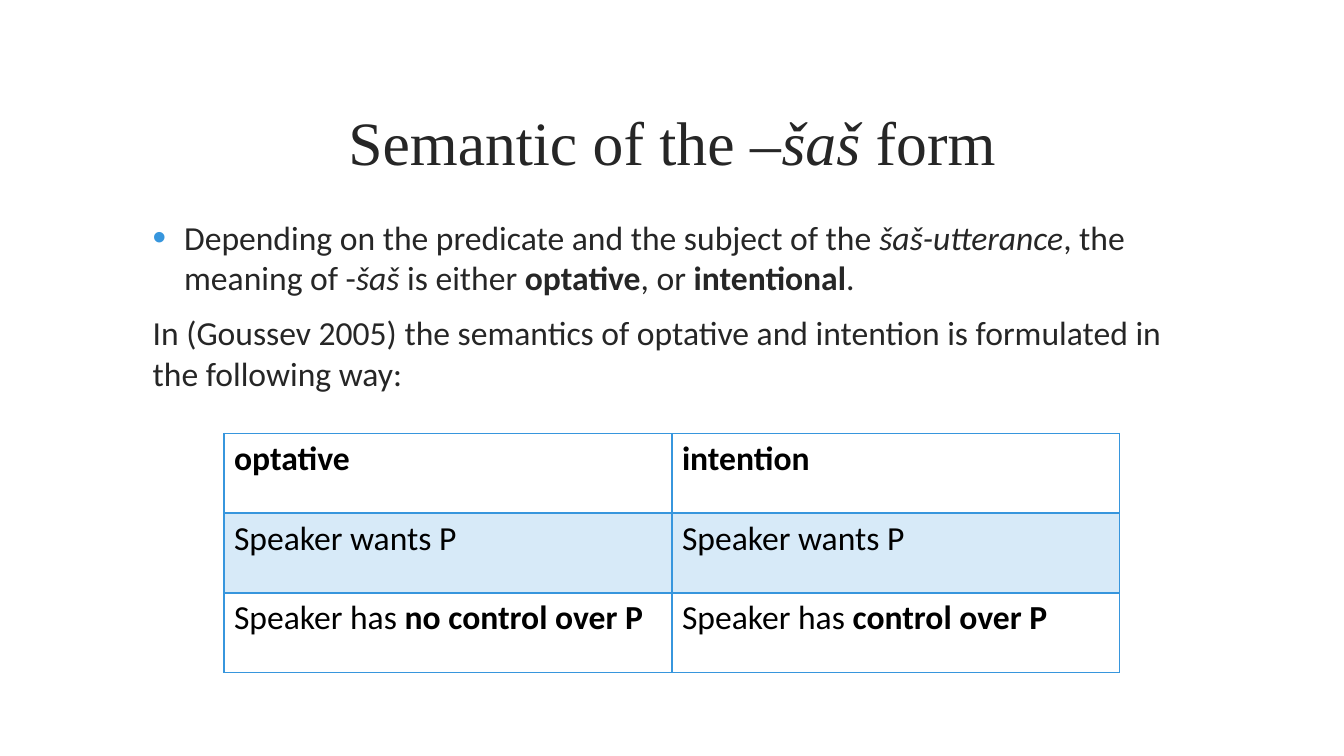
import pptx
import pptx.util
import pptx.dml.color
import pptx.enum.text
import pptx.oxml
import pptx.oxml.ns

Pt = pptx.util.Pt
RGB = pptx.dml.color.RGBColor
TEXT = RGB(0x26, 0x26, 0x26)
BLACK = RGB(0, 0, 0)
BLUE = RGB(0x37, 0x96, 0xDD)
ALIGN = pptx.enum.text.PP_ALIGN
MIDDLE = pptx.enum.text.MSO_ANCHOR.MIDDLE


def add_xml(node, xml):
    tag, rest = xml.split(" ", 1)
    space = pptx.oxml.ns.nsdecls("a")
    part = pptx.oxml.parse_xml(f"<{tag} {space} {rest}")
    node.append(part)
    return part


def add_runs(para, runs, look):
    for text, style in runs:
        run = para.add_run()
        run.text = text
        run.font.color.rgb = look["color"]
        values = {"name": look["name"], "size": look["size"],
                  "bold": style == "b", "italic": style == "i"}
        for key, value in values.items():
            setattr(run.font, key, value)


deck = pptx.Presentation()
deck.slide_width = Pt(960)
deck.slide_height = Pt(540)
slide = deck.slides.add_slide(deck.slide_layouts[6])

head = {"name": "Times New Roman", "size": Pt(44), "color": TEXT}
body = {"name": "Calibri", "size": Pt(24), "color": TEXT}
grid = {"name": "Calibri", "size": Pt(24), "color": BLACK}

title = slide.shapes.add_textbox(Pt(102), Pt(49), Pt(756), Pt(103)).text_frame
title.word_wrap = True
title.vertical_anchor = MIDDLE
para = title.paragraphs[0]
para.alignment = ALIGN.CENTER
add_runs(para, [("Semantic of the –", ""), ("šaš", "i"), (" form", "")], head)

frame = slide.shapes.add_textbox(Pt(102), Pt(151.2), Pt(756), Pt(340)).text_frame
frame.word_wrap = True
point = frame.paragraphs[0]
point.space_after = Pt(6)
props = point._p.get_or_add_pPr()
props.set("marL", str(Pt(22.5)))
props.set("indent", str(Pt(-22.5)))
for xml in [
    f'a:buClr ><a:srgbClr val="{BLUE}"/></a:buClr>',
    'a:buSzPct val="115000"/>',
    'a:buFont typeface="Arial"/>',
    'a:buChar char="•"/>',
]:
    add_xml(props, xml)
add_runs(point, [
    ("Depending on the predicate and the subject of the ", ""),
    ("šaš-utterance", "i"),
    (", the meaning of -", ""),
    ("šaš", "i"),
    (" is either ", ""),
    ("optative", "b"),
    (", or ", ""),
    ("intentional", "b"),
    (".", ""),
], body)

intro = frame.add_paragraph()
intro.space_before = Pt(4.8)
intro.space_after = Pt(6)
add_runs(intro, [
    ("In (Goussev 2005) the semantics of optative and intention "
     "is formulated in the following way:", ""),
], body)

rows = [
    [[("optative", "b")], [("intention", "b")]],
    [[("Speaker wants P", "")], [("Speaker wants P", "")]],
    [[("Speaker has ", ""), ("no control over P", "b")],
     [("Speaker has ", ""), ("control over P", "b")]],
]
table = slide.shapes.add_table(3, 2, Pt(160), Pt(309.6), Pt(640), Pt(171)).table
table.first_row = False
table.horz_banding = False
for r, row in enumerate(rows):
    table.rows[r].height = Pt(57)
    for c, runs in enumerate(row):
        cell = table.cell(r, c)
        add_runs(cell.text_frame.paragraphs[0], runs, grid)
        props = cell._tc.get_or_add_tcPr()
        for side in "LRTB":
            width = Pt(2) if r == 0 and side == "B" else Pt(1)
            add_xml(props, f'a:ln{side} w="{width}"><a:solidFill>'
                           f'<a:srgbClr val="{BLUE}"/></a:solidFill></a:ln{side}>')
        if r == 1:
            cell.fill.solid()
            cell.fill.fore_color.rgb = BLUE
            tint = props.find(pptx.oxml.ns.qn("a:solidFill"))[0]
            add_xml(tint, 'a:alpha val="20000"/>')
        else:
            cell.fill.background()

deck.save("out.pptx")
